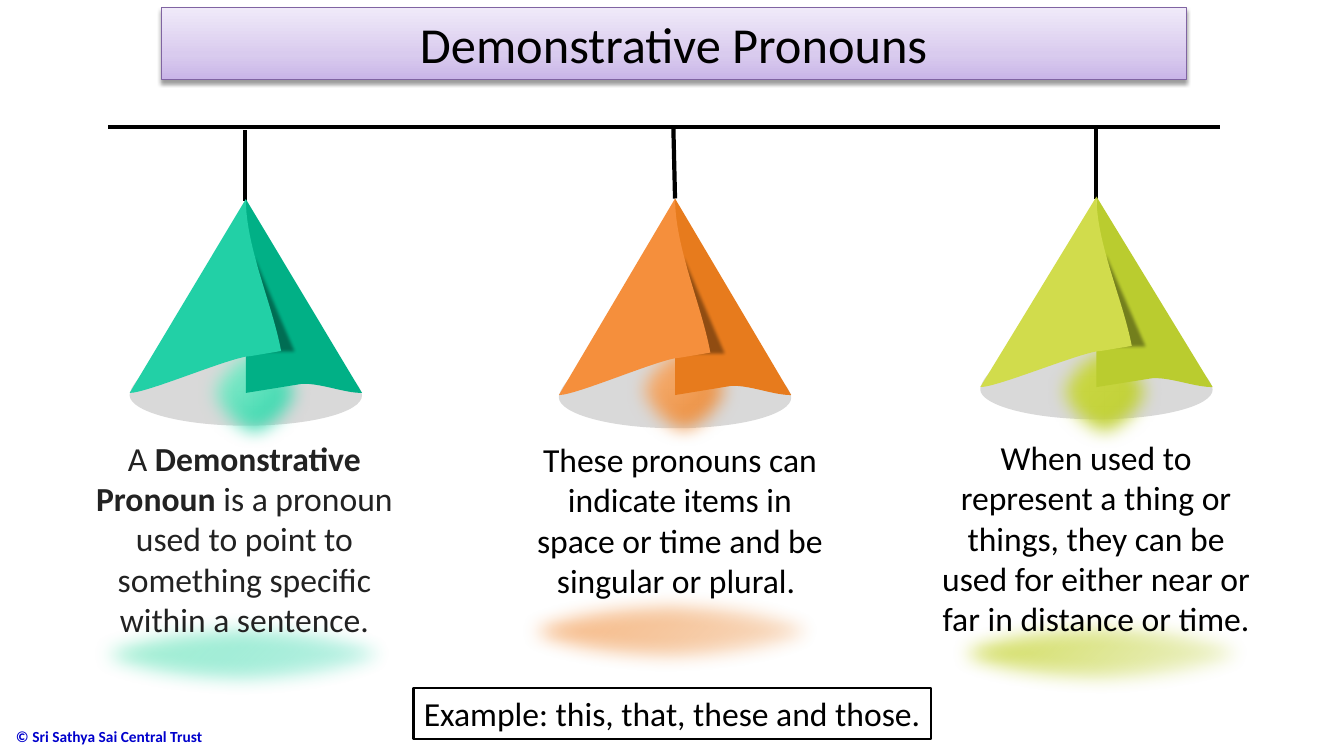
from lxml import etree
from pptx import Presentation
from pptx.dml.color import RGBColor
from pptx.enum.shapes import MSO_CONNECTOR, MSO_SHAPE
from pptx.enum.text import MSO_ANCHOR, PP_ALIGN
from pptx.oxml import parse_xml
from pptx.oxml.ns import nsdecls, qn
from pptx.util import Pt

RECTANGLE, OVAL = MSO_SHAPE.RECTANGLE, MSO_SHAPE.OVAL
TRIANGLE = MSO_SHAPE.RIGHT_TRIANGLE
STRAIGHT = MSO_CONNECTOR.STRAIGHT
LEFT, CENTER = PP_ALIGN.LEFT, PP_ALIGN.CENTER
TOP, MIDDLE = MSO_ANCHOR.TOP, MSO_ANCHOR.MIDDLE

BLACK, DISC_GREY = "000000", "D9D9D9"
RAIL_Y = 90.7

# Outlines around the lamp tip: x in points, y as a share of the lamp height.
# A pair is a straight step, six numbers are a cubic curve.
DISC = [(-83, 1.013), (-83.5, 0.935, -48, 0.686, -2, 0.686),
        (44, 0.686, 83, 0.93, 83, 1.013), (83, 1.1, 46, 1.169, 0, 1.169),
        (-46, 1.169, -82.5, 1.096, -83, 1.013)]
BACK_FLAP = [(0, 1), (0, 0), (83, 1), (70, 1, 54, 0.95, 40.3, 0.953), (0, 1)]
FRONT_FLAP = [(25.2, 0.784), (18.7, 0.535, 0, 0.25, 0, 0), (-83, 1),
              (-70, 1, -9.4, 0.81, 3.6, 0.81), (25.2, 0.784)]

GREEN_STOPS = [(0, "00CC9B"), (95, "BAF5DB"), (100, "DEF9ED")]
ORANGE_STOPS = [(0, "E77B1D"), (95, "FAC090"), (100, "FAC090")]
LIME_STOPS = [(0, "BACC2F"), (100, "D1DC4C")]

LAMPS = [
    {"tip": (175.6, 142.2), "cord": (175, 92.9, 175, 143.3), "height": 138.5,
     "bulb_y": 236, "front": "22D0A6", "back": "01B086", "stops": GREEN_STOPS,
     "glow": (51.8, 437), "text_box": (56.9, 309.1, 235.4, 152.6),
     "text_color": "222222",
     "runs": [("A ", False), ("Demonstrative Pronoun", True),
              (" is a pronoun used to point to something specific"
               " within a sentence.", False)]},
    {"tip": (482.2, 141.8), "cord": (481, 91.4, 482.2, 141.8), "height": 140.4,
     "bulb_y": 235, "front": "F58F3C", "back": "E77B1D", "stops": ORANGE_STOPS,
     "glow": (357.8, 420.5), "text_box": (373.7, 309.9, 223.9, 123.8),
     "text_color": BLACK,
     "runs": [("These pronouns can indicate items in space or time and be "
               "singular or plural. ", False)]},
    {"tip": (783.2, 140.4), "cord": (782.9, 91.4, 782.9, 141.8),
     "height": 136.1,
     "bulb_y": 236, "front": "D1DC4C", "back": "BACC2F", "stops": LIME_STOPS,
     "glow": (664.6, 436.3), "text_box": (663.8, 308.6, 238.3, 152.6),
     "text_color": BLACK,
     "runs": [("When used to represent a thing or things, they can be used for "
               "either near or far in distance or time.", False)]},
]


def color(hex_value):
    return RGBColor.from_string(hex_value)


def paint(shape, fill=None, line=None, line_width=1):
    shape.shadow.inherit = False
    if fill:
        shape.fill.solid()
        shape.fill.fore_color.rgb = color(fill)
    else:
        shape.fill.background()
    if line:
        shape.line.color.rgb = color(line)
        shape.line.width = Pt(line_width)
    else:
        shape.line.fill.background()


def add_preset(slide, kind, box, **style):
    shape = slide.shapes.add_shape(kind, *(Pt(value) for value in box))
    paint(shape, **style)
    return shape


def add_line(slide, ends):
    line = slide.shapes.add_connector(STRAIGHT, *(Pt(value) for value in ends))
    line.line.color.rgb = color(BLACK)
    line.line.width = Pt(3)
    etree.SubElement(line._element.spPr, qn("a:effectLst"))


def soften(shape, radius):
    effects = shape._element.spPr.find(qn("a:effectLst"))
    etree.SubElement(effects, qn("a:softEdge"), rad=str(Pt(radius)))


def set_alpha(shape, percent):
    rgb = shape._element.spPr.find(qn("a:solidFill"))[0]
    etree.SubElement(rgb, qn("a:alpha"), val=str(percent * 1000))


def set_gradient(shape, stops, direction, first_alpha=100):
    """Replace the fill by colour stops; direction is the closing XML."""
    marks = ""
    for index, (position, hex_value) in enumerate(stops):
        alpha = 100 if index else first_alpha
        marks += (f'<a:gs pos="{position * 1000}"><a:srgbClr val="{hex_value}">'
                  f'<a:alpha val="{alpha * 1000}"/></a:srgbClr></a:gs>')
    properties = shape._element.spPr
    properties.replace(properties.find(qn("a:noFill")), parse_xml(
        f'<a:gradFill {nsdecls("a")} rotWithShape="1"><a:gsLst>{marks}</a:gsLst>'
        f'{direction}</a:gradFill>'))


def add_soft_oval(slide, box, stops, first_alpha=100):
    oval = add_preset(slide, OVAL, box)
    set_gradient(oval, stops, '<a:path path="circle"><a:fillToRect l="100000" '
                 't="100000"/></a:path>', first_alpha)
    soften(oval, 13.5)


def add_outline(slide, outline, lamp, fill):
    """Draw the straight outline, then bend the steps that are curves."""
    tip_x, tip_y = lamp["tip"]
    steps = [[(Pt(tip_x + x), Pt(tip_y + y * lamp["height"]))
              for x, y in zip(step[::2], step[1::2])] for step in outline]
    builder = slide.shapes.build_freeform(*steps[0][0], scale=1.0)
    builder.add_line_segments([step[-1] for step in steps[1:]], close=True)
    shape = builder.convert_to_shape()
    paint(shape, fill)
    segments = list(shape._element.iter(qn("a:lnTo")))
    for segment, step in zip(segments, steps[1:]):
        if len(step) == 3:
            curve = etree.Element(qn("a:cubicBezTo"))
            for x, y in step:
                etree.SubElement(curve, qn("a:pt"), x=str(x - shape.left),
                                 y=str(y - shape.top))
            segment.getparent().replace(segment, curve)


def write(shape, runs, size, text_color, align=CENTER, anchor=TOP):
    frame = shape.text_frame
    frame.word_wrap = True
    frame.vertical_anchor = anchor
    paragraph = frame.paragraphs[0]
    paragraph.alignment = align
    for text, bold in runs:
        run = paragraph.add_run()
        run.text = text
        formats = {"name": "Calibri", "size": Pt(size), "bold": bold}
        for name, value in formats.items():
            setattr(run.font, name, value)
        run.font.color.rgb = color(text_color)


def add_text(slide, box, *text, **layout):
    shape = slide.shapes.add_textbox(*(Pt(value) for value in box))
    write(shape, *text, **layout)


def add_lamp(slide, lamp):
    tip_x, tip_y = lamp["tip"]
    height = lamp["height"]
    add_line(slide, lamp["cord"])
    add_outline(slide, DISC, lamp, DISC_GREY)
    add_soft_oval(slide, (tip_x - 37.7, lamp["bulb_y"], 87, 87), lamp["stops"])
    add_outline(slide, BACK_FLAP, lamp, lamp["back"])
    fold = add_preset(slide, TRIANGLE, (tip_x + 4, tip_y + 0.203 * height,
                                        35.3, 0.6 * height), fill=BLACK)
    set_alpha(fold, 38)
    soften(fold, 2.5)
    add_outline(slide, FRONT_FLAP, lamp, lamp["front"])
    add_soft_oval(slide, (*lamp["glow"], 244, 60.5), lamp["stops"], 10)
    add_text(slide, lamp["text_box"], lamp["runs"], 24, lamp["text_color"])


def add_title(slide):
    title = add_preset(slide, RECTANGLE, (115.2, 5.2, 732.2, 51.8),
                       line="8064A2", line_width=0.75)
    set_gradient(title, [(0, "F0EAF9"), (65, "D9CBEE"), (100, "C9B5E8")],
                 '<a:lin ang="5400000" scaled="0"/>')
    effects = title._element.spPr.find(qn("a:effectLst"))
    effects.append(parse_xml(
        f'<a:outerShdw {nsdecls("a")} blurRad="{Pt(3)}" dist="{Pt(2)}" '
        'dir="5400000" rotWithShape="0"><a:srgbClr val="000000">'
        '<a:alpha val="38000"/></a:srgbClr></a:outerShdw>'))
    write(title, [("Demonstrative Pronouns", False)], 36, BLACK, anchor=MIDDLE)


def main():
    presentation = Presentation()
    presentation.slide_width, presentation.slide_height = Pt(960), Pt(540)
    slide = presentation.slides.add_slide(presentation.slide_layouts[6])
    add_text(slide, (4.3, 511.2, 254, 29.5),
             [("© Sri Sathya Sai Central Trust", True)], 11, "0000CC",
             align=LEFT, anchor=MIDDLE)
    for lamp in LAMPS:
        add_lamp(slide, lamp)
    add_line(slide, (77.5, RAIL_Y, 871.2, RAIL_Y))
    add_title(slide)
    example = add_preset(slide, RECTANGLE, (295.4, 491.4, 369.4, 36.4),
                         line=BLACK, line_width=1.5)
    write(example, [("Example: this, that, these and those.", False)], 24, BLACK)
    presentation.save("out.pptx")


if __name__ == "__main__":
    main()
